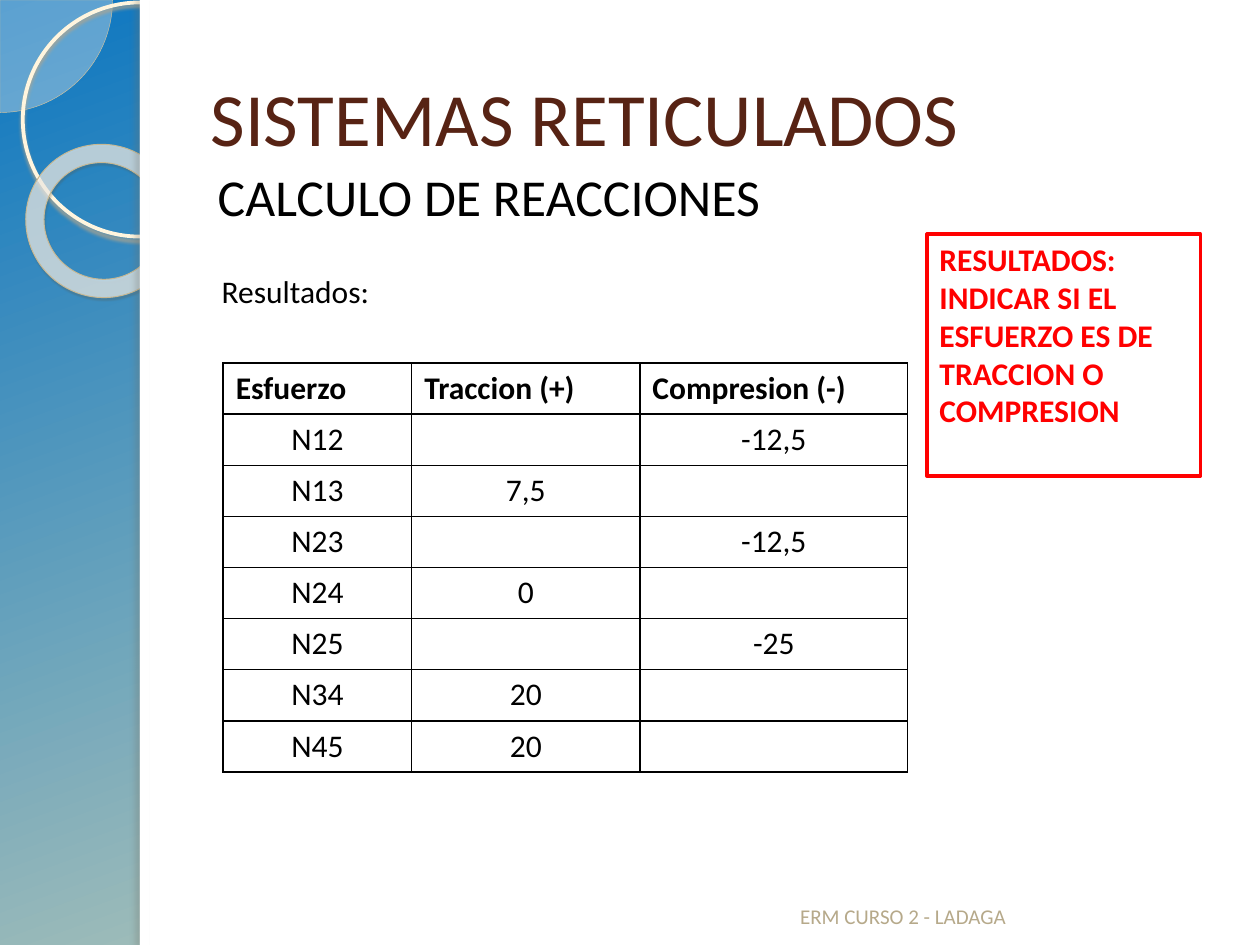
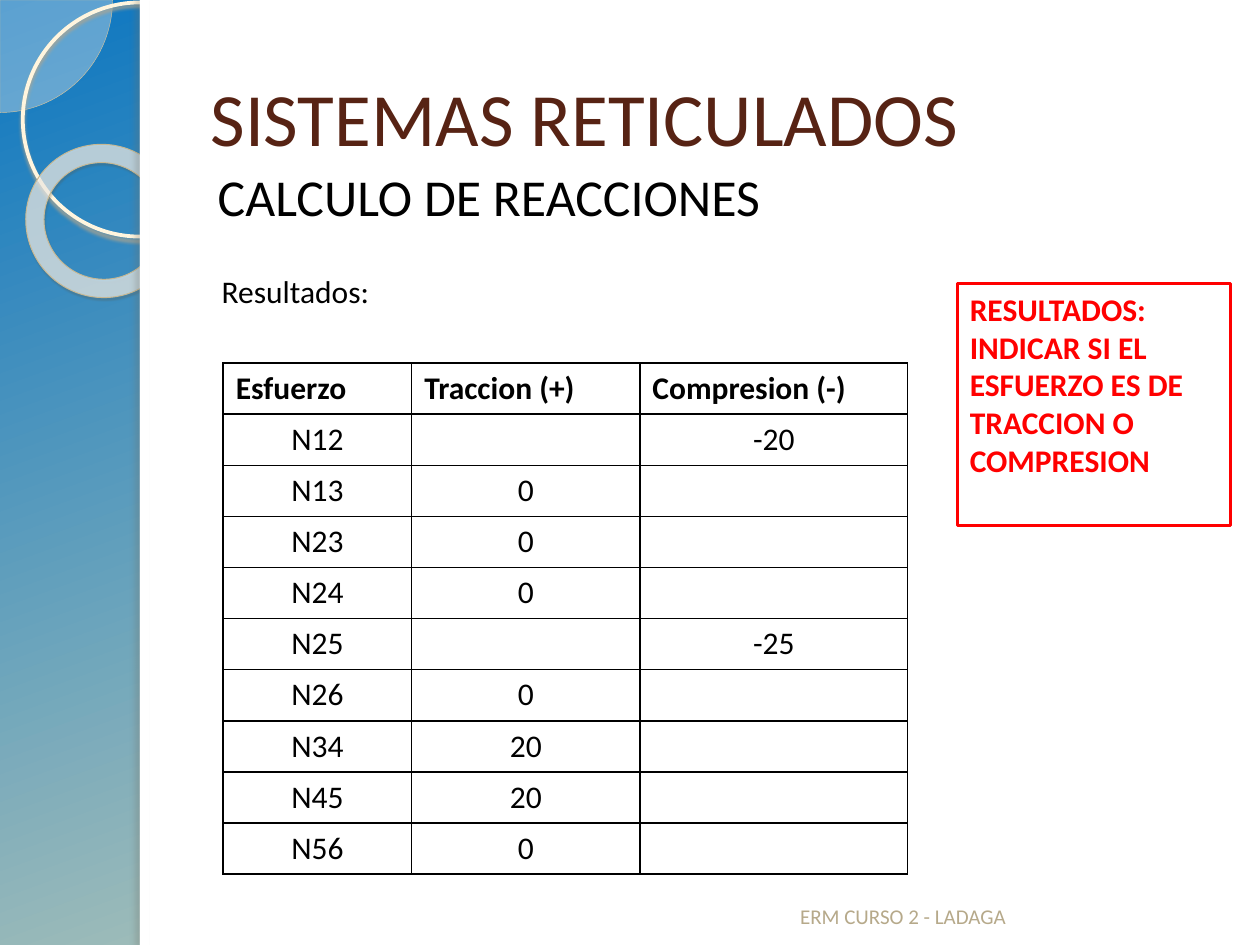
from math import cos, pi, sin

from lxml.etree import SubElement
from pptx import Presentation
from pptx.dml.color import RGBColor
from pptx.enum.shapes import MSO_SHAPE
from pptx.enum.text import MSO_ANCHOR, MSO_AUTO_SIZE, PP_ALIGN
from pptx.oxml.ns import qn
from pptx.util import Cm, Pt

FONT = "Calibri"
BLUE = RGBColor(0x0C, 0x76, 0xC1)
SAGE = RGBColor(0x9C, 0xBB, 0xB9)
WHITE = RGBColor(0xFF, 0xFF, 0xFF)
CREAM = RGBColor(0xFE, 0xFA, 0xF4)
IVORY = RGBColor(0xFF, 0xF5, 0xDE)
SAND = RGBColor(0xD3, 0xC3, 0x9F)
TAN = RGBColor(0xC7, 0xB8, 0x93)
DUST = RGBColor(0xB0, 0xA6, 0x8F)
UMBER = RGBColor(0x5A, 0x54, 0x44)
STONE = RGBColor(0x73, 0x6F, 0x63)
BROWN = RGBColor(0x57, 0x23, 0x14)
KHAKI = RGBColor(0xB6, 0xA9, 0x8A)
BLACK = RGBColor(0, 0, 0)
RED = RGBColor(0xFF, 0, 0)

WIDE, HIGH = 25.4, 19.05
EDGE = 2.82
COLS = (3.8, 4.6, 5.4)
ROW = 1.03
HEAD = ("Esfuerzo", "Traccion (+)", "Compresion (-)")
NOTE = "RESULTADOS: INDICAR SI EL ESFUERZO ES DE TRACCION O COMPRESION"
CASES = (
    ((18.69, 4.72), (
        ("N12", "", "-12,5"), ("N13", "7,5", ""), ("N23", "", "-12,5"),
        ("N24", "0", ""), ("N25", "", "-25"), ("N34", "20", ""),
        ("N45", "20", ""))),
    ((19.3, 5.72), (
        ("N12", "", "-20"), ("N13", "0", ""), ("N23", "0", ""),
        ("N24", "0", ""), ("N25", "", "-25"), ("N26", "0", ""),
        ("N34", "20", ""), ("N45", "20", ""), ("N56", "0", ""))),
)


def fade(shape, alpha):
    """Give a solid fill its opacity in percent."""
    tone = shape.fill._xPr.find(qn("a:solidFill"))[0]
    SubElement(tone, qn("a:alpha"), val=str(alpha * 1000))


def shade(shape, color, alpha, blur, dist, angle):
    """Add an outer shadow."""
    shape.shadow.inherit = False
    effects = shape._element.spPr.find(qn("a:effectLst"))
    outer = SubElement(
        effects, qn("a:outerShdw"), blurRad=str(Pt(blur)), dist=str(Pt(dist)),
        dir=str(angle * 60000), algn="tl", rotWithShape="0")
    tone = SubElement(outer, qn("a:srgbClr"), val=str(color))
    SubElement(tone, qn("a:alpha"), val=str(alpha * 1000))


def paint(shape, fill=None, line=None, width=1):
    """Set fill and line, and drop the theme shadow."""
    shape.shadow.inherit = False
    if fill is None:
        shape.fill.background()
    else:
        shape.fill.solid()
        shape.fill.fore_color.rgb = fill
    if line is None:
        shape.line.fill.background()
    else:
        shape.line.color.rgb = line
        shape.line.width = Pt(width)
    return shape


def form(slide, kind, box, **look):
    """Add a painted preset shape in a box."""
    return paint(slide.shapes.add_shape(kind, *map(Cm, box)), **look)


def style(para, size, color, bold=False, align=PP_ALIGN.LEFT):
    """Format one paragraph."""
    font = para.font
    font.name, font.size, font.bold = FONT, Pt(size), bold
    font.color.rgb = color
    para.alignment = align


def write(shape, text, size, color, bold=False, anchor=MSO_ANCHOR.TOP):
    """Put one styled paragraph in a shape."""
    frame = shape.text_frame
    frame.text = text
    frame.word_wrap = True
    frame.auto_size = MSO_AUTO_SIZE.NONE
    frame.vertical_anchor = anchor
    style(frame.paragraphs[0], size, color, bold)
    return frame.paragraphs[0]


def label(slide, box, *args, **look):
    """Add a text box."""
    return write(slide.shapes.add_textbox(*map(Cm, box)), *args, **look)


def wedge(slide, x, y, radius):
    """Draw a quarter disc with its corner at x, y."""
    steps = 30
    arc = [(Cm(x + radius * cos(i * pi / 2 / steps)),
            Cm(y + radius * sin(i * pi / 2 / steps)))
           for i in range(steps + 1)]
    pen = slide.shapes.build_freeform(Cm(x), Cm(y))
    pen.add_line_segments(arc, close=True)
    disc = paint(pen.convert_to_shape(), fill=CREAM, line=SAND, width=0.25)
    fade(disc, 33)


def band(slide, x, y, width, height):
    """Draw the blue side band, its rings and the white panel."""
    strip = form(slide, MSO_SHAPE.RECTANGLE, (x, y, width, height))
    strip.fill.gradient()
    strip.fill.gradient_angle = 290
    for stop, color in zip(strip.fill.gradient_stops, (BLUE, SAGE)):
        stop.color.rgb = color
    wedge(slide, x, y, 2.27)
    hoop = form(slide, MSO_SHAPE.OVAL, (x + 0.46, y + 0.05, 4.72, 4.72),
                line=IVORY, width=2.15)
    shade(hoop, DUST, 85, 2, 2, 90)
    ring = form(slide, MSO_SHAPE.DONUT, (x + 0.51, y + 2.92, 3.12, 3.07),
                fill=CREAM, line=TAN, width=0.58)
    ring.adjustments[0] = 0.12
    ring.rotation = 38.6
    fade(ring, 65)
    shade(ring, UMBER, 35, 1, 1.2, 75)
    side = x + width
    form(slide, MSO_SHAPE.RECTANGLE, (side, y, WIDE - side, height), fill=WHITE)
    rim = form(slide, MSO_SHAPE.RECTANGLE, (side, y, 0.2, height), fill=WHITE)
    shade(rim, STONE, 25, 3, 3, 180)


def header(slide, x, y, width):
    """Place the title and the line below it."""
    title = slide.shapes.title
    title.left, title.top = Cm(x), Cm(y)
    title.width, title.height = Cm(width), Cm(3.18)
    write(title, "SISTEMAS RETICULADOS", 43, BROWN, anchor=MSO_ANCHOR.MIDDLE)
    slide.shapes._spTree.append(title._element)
    para = label(slide, (x + 0.15, y + 2.57, width, 1.4),
                 "CALCULO DE REACCIONES", 29.6, BLACK)
    para.line_spacing = 0.9


def frame(cell):
    """Draw black borders round a cell."""
    props = cell._tc.get_or_add_tcPr()
    for index, side in enumerate(("lnL", "lnR", "lnT", "lnB")):
        line = props.makeelement(qn("a:" + side), {"w": str(Pt(1))})
        fill = SubElement(line, qn("a:solidFill"))
        SubElement(fill, qn("a:srgbClr"), val=str(BLACK))
        props.insert(index, line)


def grid(slide, x, y, rows):
    """Build the table of forces."""
    lines = (HEAD, *rows)
    table = slide.shapes.add_table(
        len(lines), len(COLS), Cm(x), Cm(y),
        Cm(sum(COLS)), Cm(ROW * len(lines))).table
    table.first_row = table.horz_banding = False
    for col, width in zip(table.columns, COLS):
        col.width = Cm(width)
    for r, line in enumerate(lines):
        table.rows[r].height = Cm(ROW)
        for c, text in enumerate(line):
            cell = table.cell(r, c)
            cell.text = text
            cell.fill.background()
            frame(cell)
            style(cell.text_frame.paragraphs[0], 18, BLACK, r == 0,
                  PP_ALIGN.CENTER if r else PP_ALIGN.LEFT)


def build(deck, spot, rows):
    """Add one slide of results."""
    slide = deck.slides.add_slide(deck.slide_layouts[5])
    band(slide, 0, 0, EDGE, HIGH)
    header(slide, 3.99, 0.76, 20.83)
    label(slide, (15.88, 17.53, 8.05, 1.32), "ERM CURSO 2 - LADAGA",
          12, KHAKI, anchor=MSO_ANCHOR.BOTTOM)
    grid(slide, 4.5, 7.32, rows)
    label(slide, (4.22, 5.36, 12.14, 1.37), "Resultados:", 18, BLACK)
    note = form(slide, MSO_SHAPE.RECTANGLE, (*spot, 5.51, 4.88),
                line=RED, width=2)
    write(note, NOTE, 18, RED, bold=True)


def main():
    """Make the deck."""
    deck = Presentation()
    deck.slide_width, deck.slide_height = Cm(WIDE), Cm(HIGH)
    for spot, rows in CASES:
        build(deck, spot, rows)
    deck.save("out.pptx")


if __name__ == "__main__":
    main()
